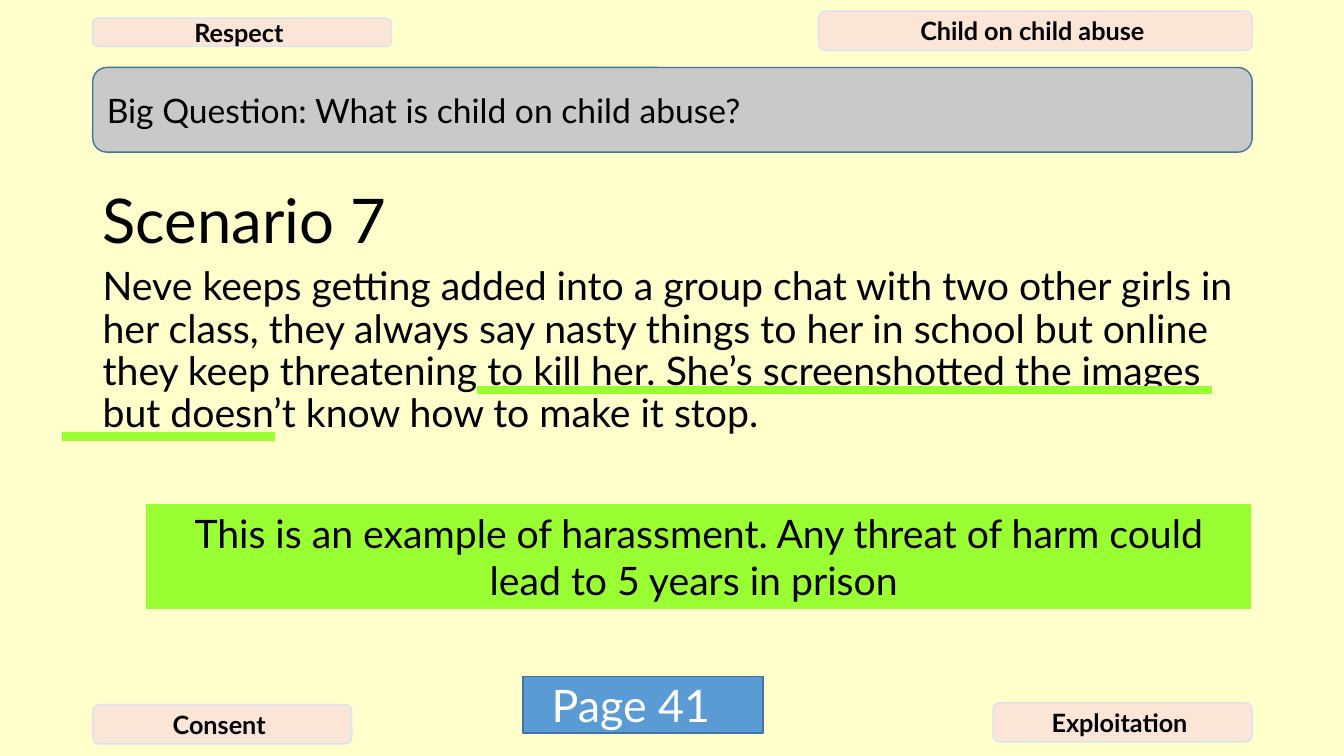
from lxml.etree import SubElement
from pptx import Presentation
from pptx.dml.color import RGBColor
from pptx.enum.shapes import MSO_CONNECTOR as Connector, MSO_SHAPE as Preset
from pptx.enum.text import MSO_ANCHOR as Anchor, PP_ALIGN as Align
from pptx.oxml.ns import qn
from pptx.util import Inches, Pt

CREAM = RGBColor(0xFF, 0xFF, 0xCC)
GREY = RGBColor(0xC9, 0xC9, 0xC9)
PEACH = RGBColor(0xFB, 0xE5, 0xD6)
PALE_BLUE = RGBColor(0xDA, 0xE3, 0xF3)
BLUE = RGBColor(0x5B, 0x9B, 0xD5)
DARK_BLUE = RGBColor(0x43, 0x73, 0x9E)
LIME = RGBColor(0x99, 0xFF, 0x33)
BLACK = RGBColor(0, 0, 0)
WHITE = RGBColor(0xFF, 0xFF, 0xFF)

deck = Presentation()
deck.slide_width, deck.slide_height = Inches(13.33), Inches(7.5)
page = deck.slides.add_slide(deck.slide_layouts[6])
page.background.fill.solid()
page.background.fill.fore_color.rgb = CREAM

# Grid of 100 columns by 100 rows
COLUMN, ROW = deck.slide_width / 100, deck.slide_height / 100
LEFT, WIDTH = 6.9, 86.27
RIGHT = LEFT + WIDTH


def place(left, top, width, height):
    return [round(n) for n in (left * COLUMN, top * ROW, width * COLUMN, height * ROW)]


def write(box, text, size, align=Align.LEFT, anchor=Anchor.MIDDLE, spacing=1.0,
          color=BLACK, bold=False):
    frame = box.text_frame
    frame.word_wrap = True
    frame.vertical_anchor = anchor
    para = frame.paragraphs[0]
    para.alignment, para.line_spacing = align, spacing
    span = para.add_run()
    span.text = text
    look = {"name": "Lato", "size": Pt(size), "bold": bold}
    for key, value in look.items():
        setattr(span.font, key, value)
    span.font.color.rgb = color


# Question bar, corner tags, page label and answer
tag = {"size": 18, "align": Align.CENTER, "bold": True}
page_label = {"size": 32, "align": Align.CENTER, "color": WHITE}
answer = {"size": 28, "align": Align.CENTER, "anchor": Anchor.TOP}
ROUND, RECT = Preset.ROUNDED_RECTANGLE, Preset.RECTANGLE
panels = [
    (ROUND, (LEFT, 8.93, WIDTH, 11.2), GREY, DARK_BLUE,
     "Big Question: What is child on child abuse?", {"size": 24}),
    (ROUND, (LEFT, 2.4, 22.21, 3.73), PEACH, PALE_BLUE, "Respect ", tag),
    (ROUND, (RIGHT - 32.26, 1.47, 32.26, 5.2), PEACH, PALE_BLUE,
     "Child on child abuse ", tag),
    (ROUND, (LEFT, 93.2, 19.28, 5.2), PEACH, PALE_BLUE, "Consent ", tag),
    (ROUND, (RIGHT - 19.28, 92.93, 19.28, 5.2), PEACH, PALE_BLUE, "Exploitation ", tag),
    (RECT, (38.93, 89.47, 17.85, 7.47), BLUE, DARK_BLUE, "Page 41", page_label),
    (RECT, (10.88, 66.67, 82.22, 13.87), LIME, None,
     "This is an example of harassment. Any threat of harm could lead to 5 years "
     "in prison ", answer),
]
for preset, area, fill, outline, text, style in panels:
    panel = page.shapes.add_shape(preset, *place(*area))
    panel.shadow.inherit = False
    panel.fill.solid()
    panel.fill.fore_color.rgb = fill
    if outline is None:
        panel.line.fill.background()
    else:
        panel.line.color.rgb = outline
        panel.line.width = Pt(1)
    write(panel, text, **style)
    if style is page_label:
        panel.text_frame.margin_right = Inches(0.34)

# Scenario heading and story
story = ("Neve keeps getting added into a group chat with two other girls in her class, "
         "they always say nasty things to her in school but online they keep "
         "threatening to kill her. She’s screenshotted the images but doesn’t know how "
         "to make it stop.")
for top, height, text, size, anchor in [
    (23.6, 12, "Scenario 7", 44, Anchor.MIDDLE),
    (34.67, 41.73, story, 28, Anchor.TOP),
]:
    box = page.shapes.add_textbox(*place(LEFT, top, WIDTH, height))
    write(box, text, size, anchor=anchor, spacing=0.9)

# Underlines of the key phrase
for start, end, row in [(35.48, 90.17, 51.6), (4.58, 20.48, 57.73)]:
    underline = page.shapes.add_connector(Connector.STRAIGHT, *place(start, row, end, row))
    underline.line.color.rgb = LIME
    underline.line.width = Pt(6)
    SubElement(underline._element.spPr, qn("a:effectLst"))

deck.save("out.pptx")
